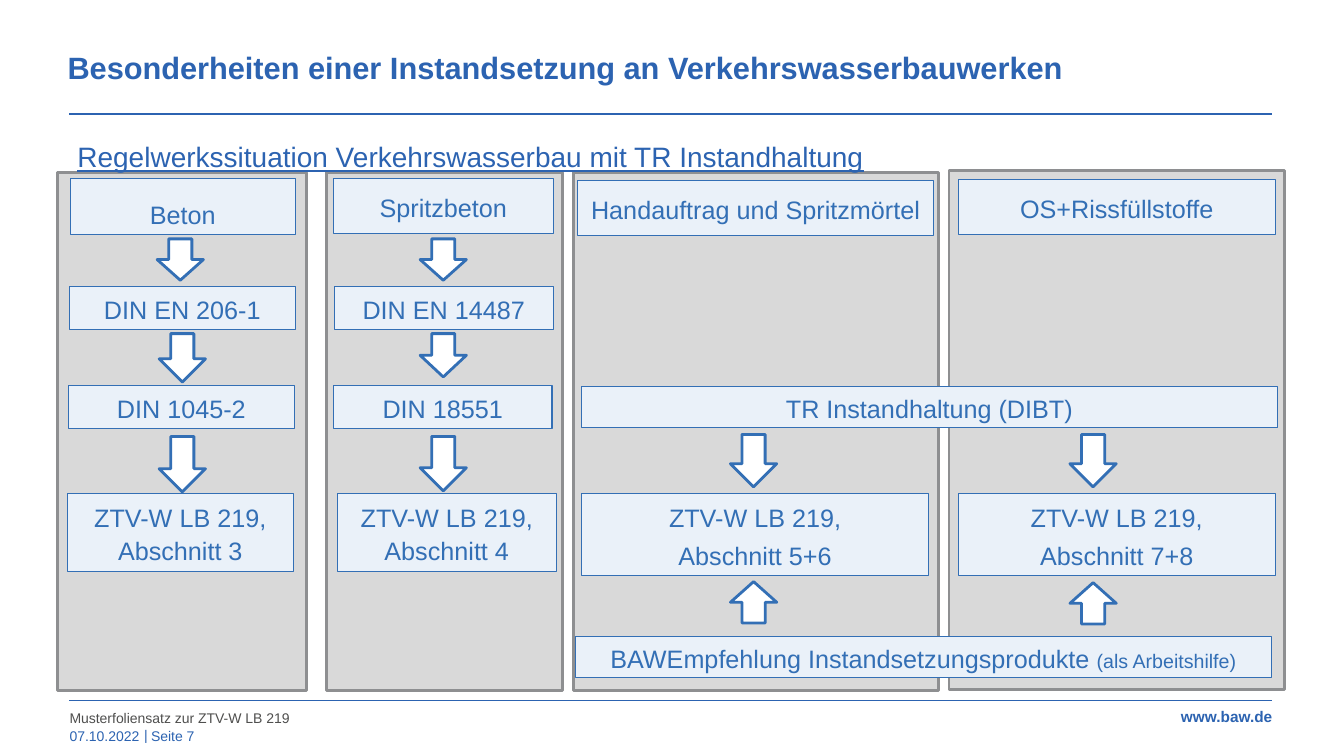
"""Builds the slide on the rules for repairing waterway structures."""
from dataclasses import dataclass

from lxml.etree import SubElement
from pptx import Presentation
from pptx.dml.color import RGBColor as RGB
from pptx.enum.shapes import MSO_CONNECTOR as CONN, MSO_SHAPE as SHAPE
from pptx.enum.text import MSO_ANCHOR as ANCHOR, PP_ALIGN as ALIGN
from pptx.oxml.ns import qn
from pptx.util import Inches, Pt


@dataclass(frozen=True)
class Theme:
    font: str = "Arial"
    brand: RGB = RGB.from_string("2C63B1")
    blue: RGB = RGB.from_string("336FB5")
    pale: RGB = RGB.from_string("EAF1F9")
    white: RGB = RGB.from_string("FFFFFF")
    panel: RGB = RGB.from_string("D9D9D9")
    frame: RGB = RGB.from_string("8E8F91")
    grey: RGB = RGB.from_string("4F4F4E")
    title: int = 22
    subtitle: int = 20
    body: int = 18
    note: int = 14
    link: int = 11
    footer: int = 10


T = Theme()
prs = Presentation()
prs.slide_width, prs.slide_height = Inches(13.34), Inches(7.5)
s = prs.slides.add_slide(prs.slide_layouts[5])


def write(sp, paragraphs, color, align=ALIGN.LEFT, spacing=1.0, anchor=ANCHOR.MIDDLE,
          inset=(0, 0), wrap=True, bold=False, underline=False):
    """Fills a shape with paragraphs, each a list of (text, size) runs."""
    tf = sp.text_frame
    tf.word_wrap, tf.vertical_anchor = wrap, anchor
    tf.margin_left = tf.margin_right = Inches(inset[0])
    tf.margin_top = tf.margin_bottom = Inches(inset[1])
    for i, runs in enumerate(paragraphs):
        p = tf.add_paragraph() if i else tf.paragraphs[0]
        p.alignment, p.line_spacing = align, spacing
        if i:
            p.space_before = Pt(3)
        for text, size in runs:
            r = p.add_run()
            r.text = text
            r.font.name, r.font.size = T.font, Pt(size)
            r.font.bold, r.font.underline = bold, underline
            r.font.color.rgb = color


def add_shape(kind, box, fill, line, width):
    """Adds a flat preset shape at (left, top, width, height)."""
    sp = s.shapes.add_shape(kind, *map(Inches, box))
    sp.shadow.inherit = False
    sp.fill.solid()
    sp.fill.fore_color.rgb = fill
    sp.line.color.rgb, sp.line.width = line, Pt(width)
    return sp


for y in (1.13, 6.95):
    rule = s.shapes.add_connector(CONN.STRAIGHT, Inches(0.69), Inches(y), Inches(12.63), Inches(y))
    rule.line.color.rgb, rule.line.width = T.brand, Pt(1)
    SubElement(rule._element.spPr, qn("a:effectLst"))

for panel in ((9.42, 1.69, 3.33, 5.15), (5.69, 1.71, 3.63, 5.14),
              (3.24, 1.71, 2.34, 5.14), (0.57, 1.71, 2.47, 5.14)):
    add_shape(SHAPE.RECTANGLE, panel, T.panel, T.frame, 2)

title = s.shapes.title
title.left, title.top, title.width, title.height = map(Inches, (0.67, 0.45, 11.95, 0.47))
write(title, [[("Besonderheiten einer Instandsetzung an Verkehrswasserbauwerken", T.title)]],
      T.brand, spacing=1.1, anchor=ANCHOR.TOP, bold=True)

subtitle = s.shapes.add_textbox(*map(Inches, (0.67, 1.17, 8.13, 0.54)))
write(subtitle, [[("Regelwerkssituation Verkehrswasserbau mit TR Instandhaltung", T.subtitle)]],
      T.brand, spacing=1.5, anchor=ANCHOR.TOP, inset=(0.1, 0.05), underline=True)

footers = (
    ("Musterfoliensatz zur ZTV-W LB 219", (0.69, 7.04, 10.79, 0.16), T.grey),
    ("07.10.2022", (0.69, 7.22, 0.71, 0.16), T.brand),
    ("|", (1.43, 7.21, 0.04, 0.16), T.brand),
    ("Seite 7", (1.5, 7.22, 0.71, 0.16), T.brand),
)
for text, box, color in footers:
    write(s.shapes.add_textbox(*map(Inches, box)), [[(text, T.footer)]], color, wrap=False)
link = s.shapes.add_textbox(*map(Inches, (11.65, 7.03, 0.98, 0.16)))
write(link, [[("www.baw.de", T.link)]], T.brand, align=ALIGN.RIGHT, bold=True)

boxes = (
    ((0.7, 1.77, 2.23, 0.56), 1.5, ["Beton"]),
    ((0.69, 2.84, 2.24, 0.43), 1.1, ["DIN EN 206-1"]),
    ((0.68, 3.82, 2.24, 0.43), 1.1, ["DIN 1045-2"]),
    ((0.67, 4.9, 2.24, 0.77), 1.1, ["ZTV-W LB 219, Abschnitt 3"]),
    ((3.31, 1.77, 2.18, 0.55), 1.1, ["Spritzbeton"]),
    ((3.32, 2.84, 2.17, 0.43), 1.1, ["DIN EN 14487"]),
    ((3.31, 3.82, 2.17, 0.43), 1.1, ["DIN 18551"]),
    ((3.35, 4.9, 2.17, 0.77), 1.1, ["ZTV-W LB 219, Abschnitt 4"]),
    ((5.73, 1.79, 3.54, 0.55), 1.1, ["Handauftrag und Spritzmörtel"]),
    ((5.77, 4.9, 3.45, 0.81), 1.1, ["ZTV-W LB 219,", "Abschnitt 5+6"]),
    ((9.51, 1.78, 3.15, 0.55), 1.1, ["OS+Rissfüllstoffe"]),
    ((9.51, 4.9, 3.15, 0.81), 1.1, ["ZTV-W LB 219,", "Abschnitt 7+8"]),
    ((5.77, 3.83, 6.91, 0.41), 1.1, ["TR Instandhaltung (DIBT)"]),
)
for box, spacing, lines in boxes:
    sp = add_shape(SHAPE.RECTANGLE, box, T.pale, T.blue, 0.75)
    write(sp, [[(line, T.body)] for line in lines], T.blue, ALIGN.CENTER, spacing, inset=(0.1, 0.05))

advice = add_shape(SHAPE.RECTANGLE, (5.71, 6.31, 6.91, 0.41), T.pale, T.blue, 0.75)
write(advice, [[("BAWEmpfehlung Instandsetzungsprodukte ", T.body), ("(als Arbeitshilfe)", T.note)]],
      T.blue, ALIGN.CENTER, 1.1, inset=(0.1, 0.05))

arrows = (
    (1.56, 2.37, 0.41, 0), (1.58, 3.31, 0.48, 0), (1.58, 4.33, 0.55, 0),
    (4.17, 2.37, 0.41, 0), (4.17, 3.31, 0.43, 0), (4.17, 4.33, 0.54, 0),
    (7.25, 4.31, 0.52, 0), (7.25, 5.77, 0.41, 180),
    (10.62, 4.31, 0.52, 0), (10.62, 5.78, 0.41, 180),
)
for x, y, height, rotation in arrows:
    arrow = add_shape(SHAPE.DOWN_ARROW, (x, y, 0.46, height), T.white, T.blue, 2)
    arrow.rotation = rotation

prs.save("out.pptx")
